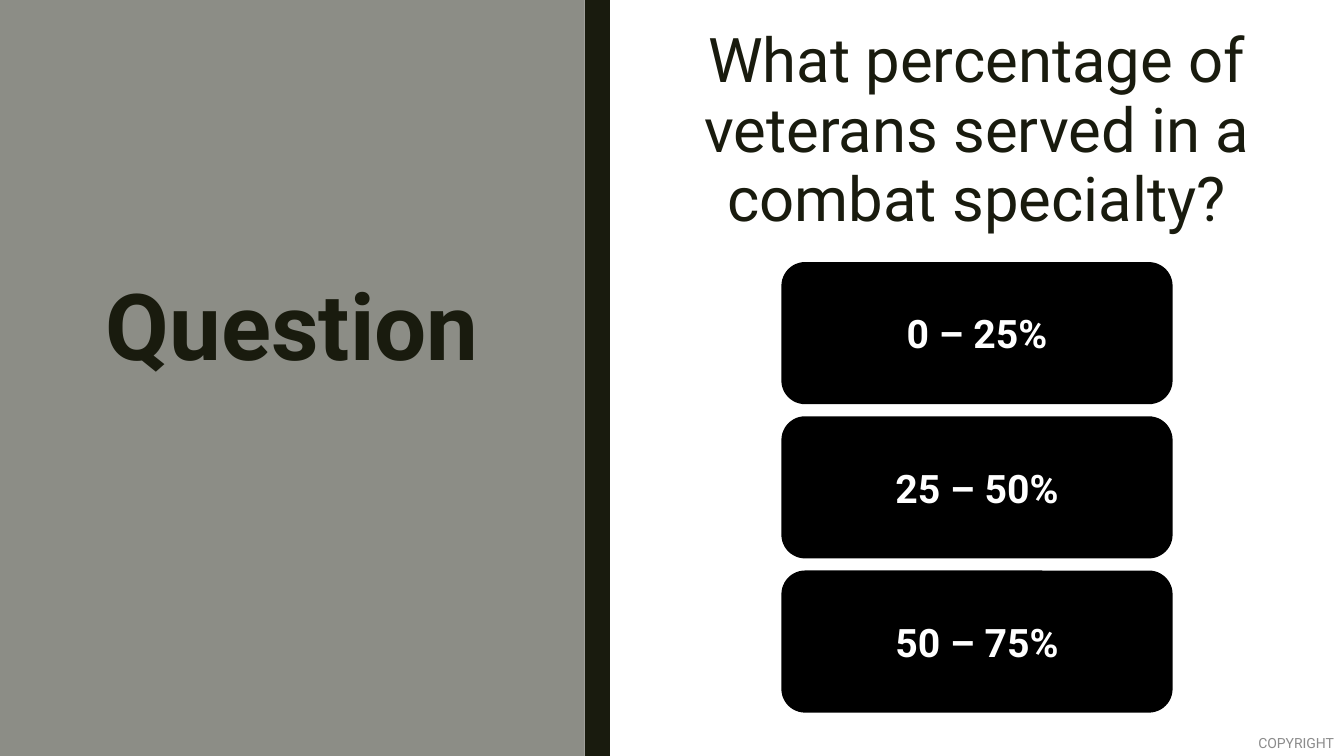
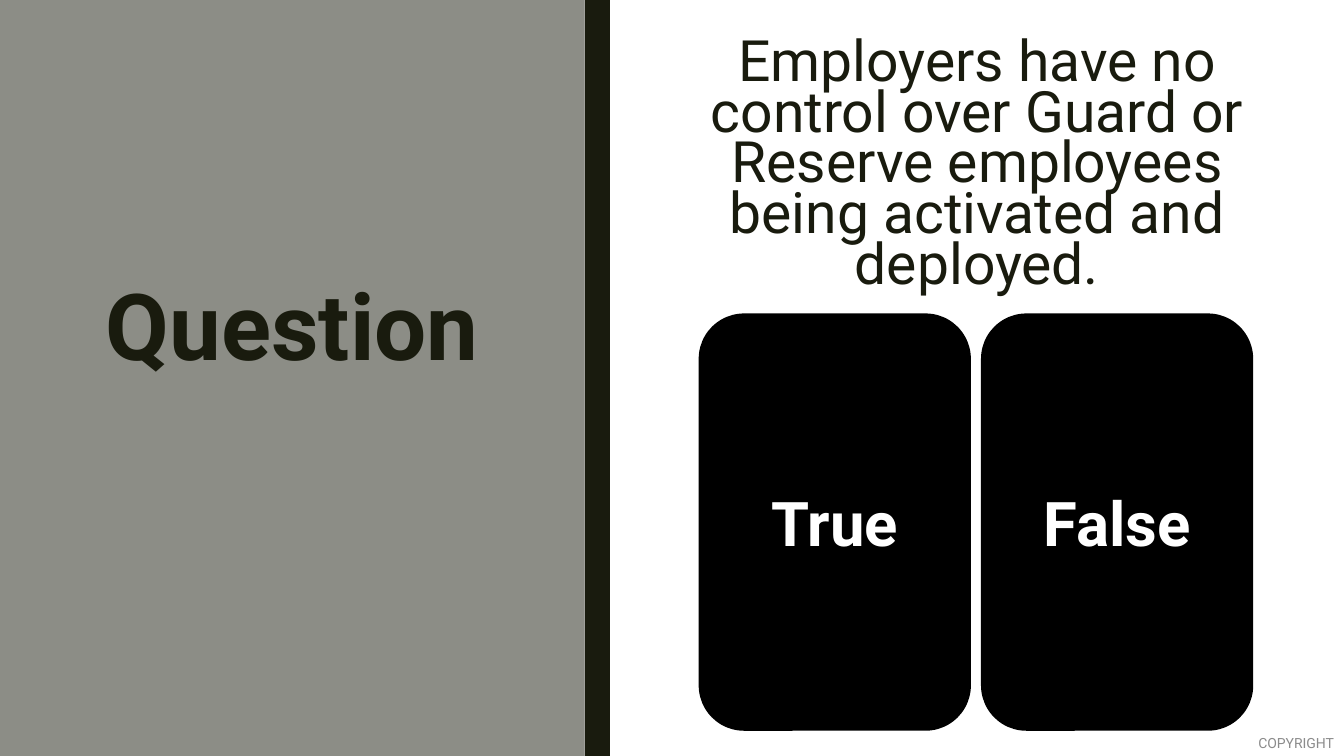
from pptx import Presentation
from pptx.dml.color import RGBColor
from pptx.enum.shapes import MSO_SHAPE
from pptx.enum.text import MSO_ANCHOR, PP_ALIGN
from pptx.util import Inches, Pt

RECT, ROUND = MSO_SHAPE.RECTANGLE, MSO_SHAPE.ROUNDED_RECTANGLE
TOP, MIDDLE = MSO_ANCHOR.TOP, MSO_ANCHOR.MIDDLE
CENTER, RIGHT = PP_ALIGN.CENTER, PP_ALIGN.RIGHT

GREY = RGBColor(0x8C, 0x8D, 0x86)
OLIVE = RGBColor(0x19, 0x1B, 0x0E)
BLACK = RGBColor(0, 0, 0)
WHITE = RGBColor(255, 255, 255)
PALE = RGBColor(0x8C, 0x8C, 0x8C)
FONT = "Roboto"

WIDE, HIGH = 13.33, 7.5
PANEL, BAR = 5.8, 0.25


def write(shape, text, size, color, bold=False, align=CENTER,
          anchor=MIDDLE, lines=1.0):
    frame = shape.text_frame
    frame.word_wrap = True
    frame.vertical_anchor = anchor
    frame.text = text
    para = frame.paragraphs[0]
    para.alignment = align
    para.line_spacing = lines
    font = para.runs[0].font
    font.name, font.size, font.bold = FONT, Pt(size), bold
    font.color.rgb = color
    return frame


def add_block(slide, kind, box, color):
    shape = slide.shapes.add_shape(kind, *map(Inches, box))
    shape.shadow.inherit = False
    shape.fill.solid()
    shape.fill.fore_color.rgb = color
    shape.line.fill.background()
    return shape


def add_label(slide, box, *args, **style):
    label = slide.shapes.add_textbox(*map(Inches, box))
    return write(label, *args, **style)


def add_frame(slide):
    """Place the side panel, its title and the footer."""
    add_block(slide, RECT, (0, 0, PANEL, HIGH), GREY)
    add_block(slide, RECT, (PANEL, 0, BAR, HIGH), OLIVE)
    add_label(slide, (0.79, 2.12, 4.22, 2.36), "Question", 66, OLIVE,
              bold=True, lines=0.84)
    foot = add_label(slide, (WIDE - 1.1, 7.24, 1.1, 0.26), "COPYRIGHT", 10,
                     PALE, align=RIGHT)
    foot.margin_top = foot.margin_bottom = 0


def add_answers(slide, box, answers, cols, gap, size):
    """Fill the box with equal answer cards, row by row."""
    left, top, width, height = box
    rows = -(-len(answers) // cols)
    wide = (width - gap * (cols - 1)) / cols
    high = (height - gap * (rows - 1)) / rows
    for i, answer in enumerate(answers):
        row, col = divmod(i, cols)
        spot = (left + col * (wide + gap), top + row * (high + gap), wide, high)
        card = add_block(slide, ROUND, spot, BLACK)
        write(card, answer, size, WHITE, bold=True)


def add_quiz(deck, prompt, ask, cards):
    """Add a slide with a styled prompt above its answer cards."""
    slide = deck.slides.add_slide(deck.slide_layouts[6])
    add_frame(slide)
    add_label(slide, ask["box"], prompt, ask["size"], OLIVE, anchor=TOP,
              lines=ask["lines"])
    add_answers(slide, **cards)


def main():
    deck = Presentation()
    deck.slide_width, deck.slide_height = Inches(WIDE), Inches(HIGH)
    add_quiz(
        deck, "What percentage of veterans served in a combat specialty?",
        dict(box=(6.84, 0.22, 5.7, 2.54), size=44, lines=0.94),
        dict(box=(7.75, 2.6, 3.88, 4.47), cols=1, gap=0.12, size=28,
             answers=["0 – 25%", "25 – 50%", "50 – 75%"]))
    add_quiz(
        deck, "Employers have no control over Guard or Reserve employees "
        "being activated and deployed.",
        dict(box=(6.84, 0.36, 5.7, 2.66), size=40.7, lines=0.74),
        dict(box=(6.93, 3.11, 5.5, 4.14), cols=2, gap=0.1, size=44,
             answers=["True", "False"]))
    deck.save("out.pptx")


if __name__ == "__main__":
    main()
